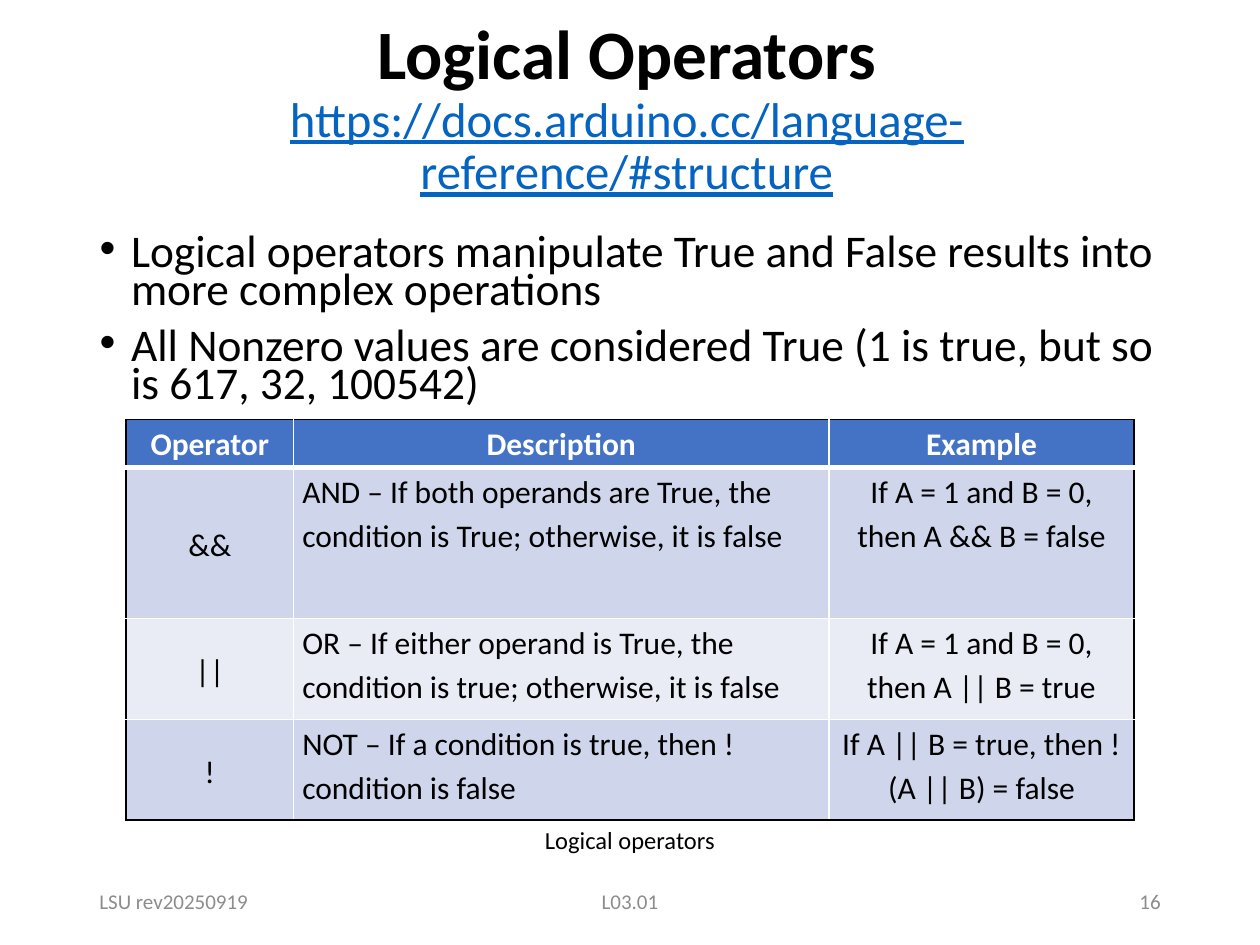
"""Build the Logical Operators slide."""
from lxml import etree
from pptx import Presentation
from pptx.dml.color import RGBColor
from pptx.enum.text import MSO_ANCHOR, MSO_AUTO_SIZE, PP_ALIGN
from pptx.oxml.ns import qn
from pptx.util import Inches, Pt

LEFT, CENTER, RIGHT = PP_ALIGN.LEFT, PP_ALIGN.CENTER, PP_ALIGN.RIGHT
TOP, MIDDLE = MSO_ANCHOR.TOP, MSO_ANCHOR.MIDDLE
NO_AUTOFIT = MSO_AUTO_SIZE.NONE

BLACK = RGBColor(0x00, 0x00, 0x00)
WHITE = RGBColor(0xFF, 0xFF, 0xFF)
GRAY = RGBColor(0x8C, 0x8C, 0x8C)
LINK_BLUE = RGBColor(0x05, 0x63, 0xC1)
HEADER_BLUE = RGBColor(0x44, 0x72, 0xC4)
BAND_DARK = RGBColor(0xCF, 0xD5, 0xEA)
BAND_LIGHT = RGBColor(0xE9, 0xEB, 0xF5)

FONT = "Calibri"
WIDTH, HEIGHT = 10, 7.5
MARGIN = 0.69
TITLE_SIZE = 39.6
HEADING = "Logical Operators"
ADDRESS = "https://docs.arduino.cc/language-reference/#structure"
POINTS = [
    "Logical operators manipulate True and False results into more complex operations",
    "All Nonzero values are considered True (1 is true, but so is 617, 32, 100542)",
]
COLUMN_WIDTHS = [1.33, 4.25, 2.42]
ROW_HEIGHTS = [0.38, 1.2, 0.8, 0.8]
OPERATORS = [
    ["Operator", "Description", "Example"],
    ["&&", "AND – If both operands are True, the condition is True; otherwise, it is false",
     "If A = 1 and B = 0, then A && B = false"],
    ["||", "OR – If either operand is True, the condition is true; otherwise, it is false",
     "If A = 1 and B = 0, then A || B = true"],
    ["!", "NOT – If a condition is true, then !condition is false",
     "If A || B = true, then !(A || B) = false"],
]


def place(shape, left, top, width, height):
    """Move and size a shape, in inches."""
    shape.left, shape.top = Inches(left), Inches(top)
    shape.width, shape.height = Inches(width), Inches(height)


def style(run, size, color, bold=False, underline=False):
    """Format one run."""
    font = run.font
    font.name, font.size = FONT, Pt(size)
    font.bold, font.underline = bold, underline
    font.color.rgb = color


def fill_title(title):
    """Write the heading with the reference address below it."""
    place(title, 1.76, 0.15, 6.43, 1.45)
    frame = title.text_frame
    frame.auto_size, frame.vertical_anchor = NO_AUTOFIT, MIDDLE
    paragraph = frame.paragraphs[0]
    paragraph.text = f"{HEADING}\v{ADDRESS}"
    paragraph.alignment, paragraph.line_spacing = CENTER, 0.9
    line_break = paragraph._p.find(qn("a:br"))
    etree.SubElement(line_break, qn("a:rPr"), sz=str(round(TITLE_SIZE * 100)))
    heading, address = paragraph.runs
    style(heading, TITLE_SIZE, BLACK, bold=True)
    style(address, 27.9, LINK_BLUE, underline=True)


def fill_points(body):
    """Write the bulleted statements."""
    place(body, MARGIN, 1.83, WIDTH - 2 * MARGIN, 1.5)
    frame = body.text_frame
    frame.text = "\n".join(POINTS)
    frame.auto_size = NO_AUTOFIT
    for index, paragraph in enumerate(frame.paragraphs):
        paragraph.line_spacing = 0.7
        paragraph.space_before = Pt(10 if index else 0)
        properties = paragraph._p.get_or_add_pPr()
        properties.set("marL", str(Inches(0.25)))
        properties.set("indent", str(-Inches(0.25)))
        etree.SubElement(properties, qn("a:buFont"), typeface="Arial")
        etree.SubElement(properties, qn("a:buChar"), char="•")
        style(paragraph.runs[0], 25.9, BLACK)


def add_label(slide, text, box, size, color, alignment, anchor):
    """Add a one-line label."""
    label = slide.shapes.add_textbox(*map(Inches, box))
    frame = label.text_frame
    frame.word_wrap, frame.vertical_anchor = True, anchor
    paragraph = frame.paragraphs[0]
    paragraph.text, paragraph.alignment = text, alignment
    style(paragraph.runs[0], size, color)


def add_border(cell, side, color, width):
    """Draw one edge of a cell."""
    line = etree.SubElement(cell._tc.get_or_add_tcPr(), qn(f"a:ln{side}"), w=str(Pt(width)))
    solid = etree.SubElement(line, qn("a:solidFill"))
    etree.SubElement(solid, qn("a:srgbClr"), val=str(color))


def format_cell(cell, row, column):
    """Style a cell by its place in the table."""
    header = row == 0
    last_row, last_column = len(ROW_HEIGHTS) - 1, len(COLUMN_WIDTHS) - 1
    cell.margin_left = cell.margin_right = Inches(0.07)
    cell.margin_top = cell.margin_bottom = 0
    cell.vertical_anchor = MIDDLE if column == 0 and not header else TOP
    paragraph = cell.text_frame.paragraphs[0]
    paragraph.alignment = LEFT if column == 1 and not header else CENTER
    paragraph.line_spacing = 1.15
    style(paragraph.runs[0], 18, WHITE if header else BLACK, bold=header)
    edges = [
        ("L", column == 0, 1),
        ("R", column == last_column, 1),
        ("T", header, 3 if row == 1 else 1),
        ("B", row == last_row, 3 if header else 1),
    ]
    for side, outer, width in edges:
        add_border(cell, side, BLACK if outer else WHITE, width)
    cell.fill.solid()
    band = BAND_DARK if row % 2 else BAND_LIGHT
    cell.fill.fore_color.rgb = HEADER_BLUE if header else band


def add_operator_table(slide):
    """Add the table of operators."""
    size = sum(COLUMN_WIDTHS), sum(ROW_HEIGHTS)
    frame = slide.shapes.add_table(
        len(ROW_HEIGHTS), len(COLUMN_WIDTHS), *map(Inches, (1, 3.33, *size)))
    table = frame.table
    for column, width in zip(table.columns, COLUMN_WIDTHS):
        column.width = Inches(width)
    for row, height in zip(table.rows, ROW_HEIGHTS):
        row.height = Inches(height)
    for row, entries in enumerate(OPERATORS):
        for column, entry in enumerate(entries):
            cell = table.cell(row, column)
            cell.text = entry
            format_cell(cell, row, column)


def add_footer(slide):
    """Add the revision, lecture and page labels."""
    side, middle = 2.25, 3.38
    labels = [
        ("LSU rev20250919", MARGIN, side, LEFT),
        ("L03.01", (WIDTH - middle) / 2, middle, CENTER),
        ("16", WIDTH - MARGIN - side, side, RIGHT),
    ]
    for text, left, width, alignment in labels:
        add_label(slide, text, (left, 6.95, width, 0.4), 12, GRAY, alignment, MIDDLE)


def main():
    """Build and save the slide."""
    deck = Presentation()
    deck.slide_width, deck.slide_height = Inches(WIDTH), Inches(HEIGHT)
    slide = deck.slides.add_slide(deck.slide_layouts[1])
    fill_title(slide.shapes.title)
    fill_points(slide.placeholders[1])
    add_footer(slide)
    add_label(slide, "Logical operators", (1, 6.5, 8, 0.34), 14, BLACK, CENTER, TOP)
    add_operator_table(slide)
    deck.save("out.pptx")


if __name__ == "__main__":
    main()
